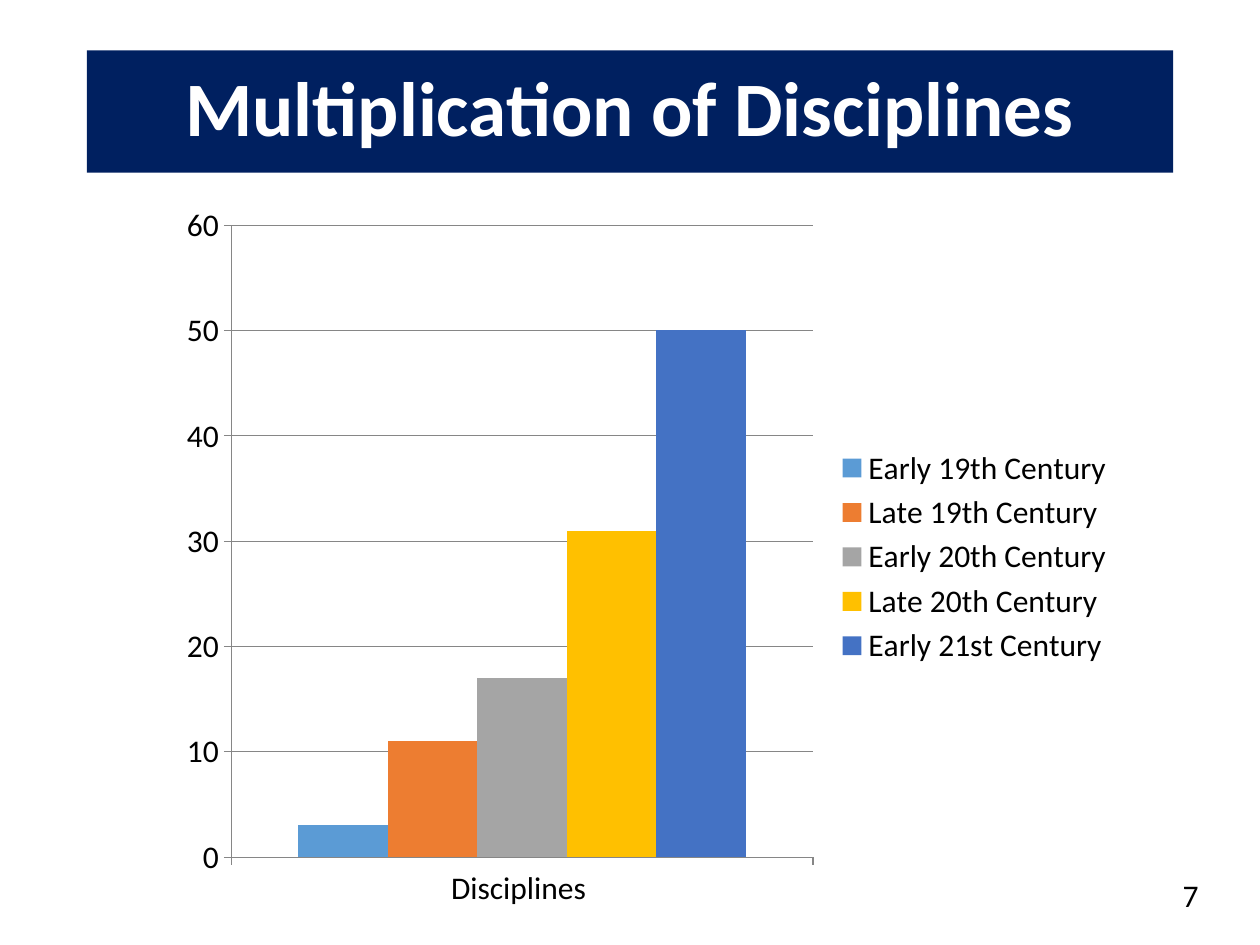
from pptx import Presentation
from pptx.chart.data import CategoryChartData
from pptx.dml.color import RGBColor
from pptx.enum.chart import XL_CHART_TYPE, XL_LEGEND_POSITION, XL_TICK_MARK
from pptx.enum.shapes import MSO_SHAPE
from pptx.enum.text import MSO_ANCHOR, PP_ALIGN
from pptx.util import Inches, Pt

FONT = "Calibri"
COLORS = {
    "navy": "002060",
    "white": "FFFFFF",
    "black": "000000",
    "line": "868686",
    "blue": "5B9BD5",
    "orange": "ED7D31",
    "gray": "A5A5A5",
    "gold": "FFC000",
    "indigo": "4472C4",
}
PERIODS = [
    ("Early 19th Century ", 3, "blue"),
    ("Late 19th Century ", 11, "orange"),
    ("Early 20th Century ", 17, "gray"),
    ("Late 20th Century ", 31, "gold"),
    ("Early 21st Century ", 50, "indigo"),
]


def color(name):
    return RGBColor.from_string(COLORS[name])


def style_font(font, size, name, bold=False):
    font.name = FONT
    font.size = Pt(size)
    font.bold = bold
    font.color.rgb = color(name)


def add_title(page, text):
    box = page.shapes.add_shape(
        MSO_SHAPE.RECTANGLE, Inches(0.69), Inches(0.4), Inches(8.62), Inches(0.97)
    )
    box.shadow.inherit = False
    box.fill.solid()
    box.fill.fore_color.rgb = color("navy")
    box.line.fill.background()
    box.text_frame.word_wrap = True
    box.text_frame.vertical_anchor = MSO_ANCHOR.MIDDLE
    para = box.text_frame.paragraphs[0]
    para.text = text
    para.alignment = PP_ALIGN.CENTER
    para.line_spacing = 0.9
    style_font(para.font, 44, "white", bold=True)


def style_axis(axis):
    axis.major_tick_mark = XL_TICK_MARK.OUTSIDE
    axis.minor_tick_mark = XL_TICK_MARK.NONE
    style_line(axis.format.line)


def style_line(line):
    line.color.rgb = color("line")
    line.width = Pt(0.75)


def add_discipline_chart(page):
    data = CategoryChartData()
    data.categories = ["Disciplines "]
    for name, count, _ in PERIODS:
        data.add_series(name, [count])
    chart = page.shapes.add_chart(
        XL_CHART_TYPE.COLUMN_CLUSTERED,
        Inches(1.33), Inches(1.52), Inches(7.67), Inches(5.8), data,
    ).chart
    style_font(chart.font, 18, "black")
    chart.has_title = False
    chart.has_legend = True
    chart.legend.position = XL_LEGEND_POSITION.RIGHT
    chart.legend.include_in_layout = False

    style_axis(chart.category_axis)
    style_axis(chart.value_axis)
    chart.value_axis.minimum_scale = 0
    chart.value_axis.maximum_scale = 60
    chart.value_axis.major_unit = 10
    chart.value_axis.has_major_gridlines = True
    style_line(chart.value_axis.major_gridlines.format.line)

    plot = chart.plots[0]
    plot.gap_width = 150
    plot.vary_by_categories = False
    for series, (_, _, fill_name) in zip(plot.series, PERIODS):
        series.format.fill.solid()
        series.format.fill.fore_color.rgb = color(fill_name)


def add_page_number(page, number):
    box = page.shapes.add_textbox(Inches(7.7), Inches(6.9), Inches(1.91), Inches(0.4))
    box.text_frame.word_wrap = True
    para = box.text_frame.paragraphs[0]
    para.text = str(number)
    para.alignment = PP_ALIGN.RIGHT
    style_font(para.font, 18, "black")


def main():
    deck = Presentation()
    deck.slide_width = Inches(10)
    deck.slide_height = Inches(7.5)
    page = deck.slides.add_slide(deck.slide_layouts[6])
    add_title(page, "Multiplication of Disciplines")
    add_discipline_chart(page)
    add_page_number(page, 7)
    deck.save("out.pptx")


if __name__ == "__main__":
    main()
